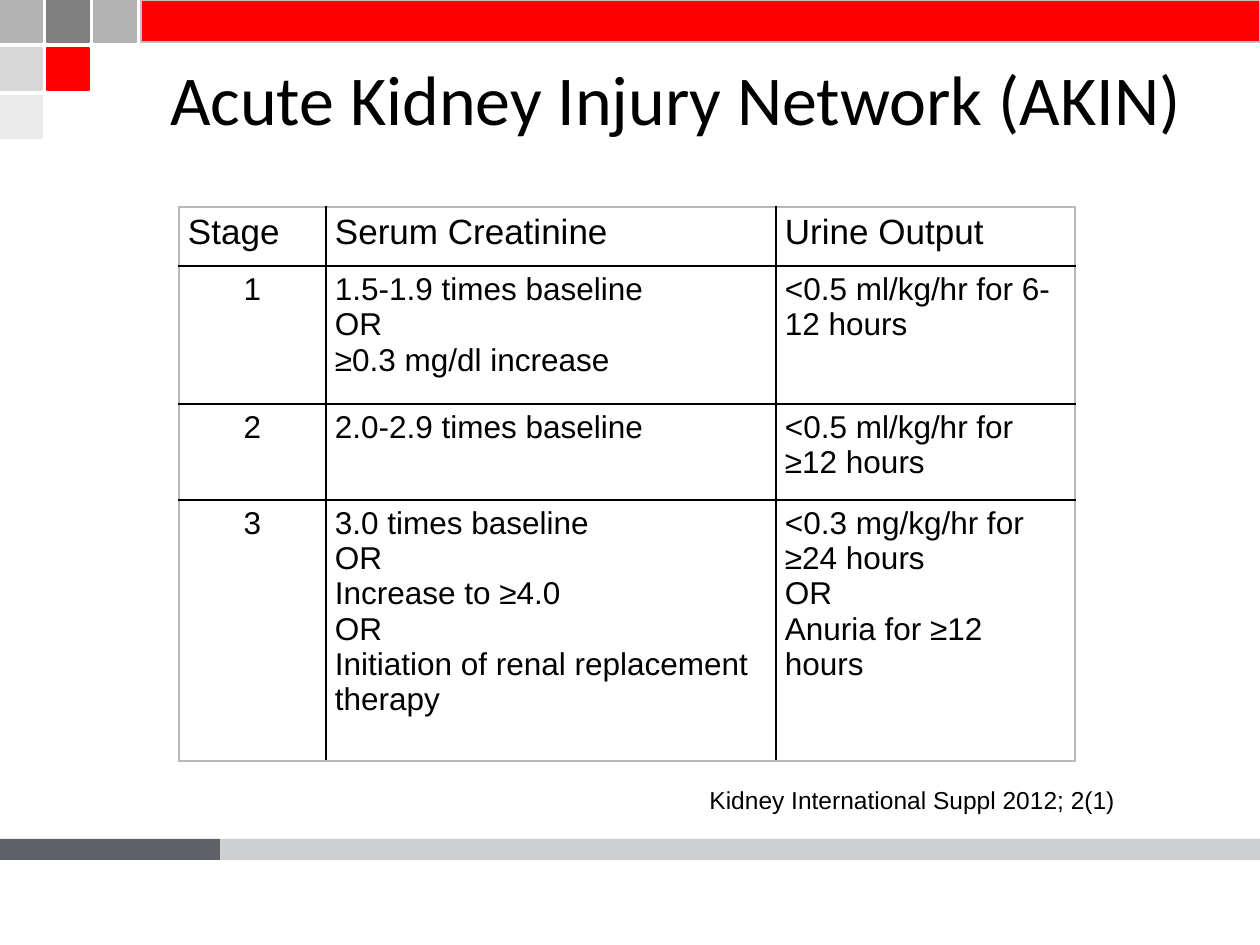
from lxml.etree import SubElement
from pptx import Presentation
from pptx.dml.color import RGBColor
from pptx.enum.shapes import MSO_SHAPE as SHAPE
from pptx.enum.text import MSO_ANCHOR as ANCHOR, PP_ALIGN as ALIGN
from pptx.oxml import parse_xml
from pptx.oxml.ns import nsdecls, qn
from pptx.util import Pt

EMU_PER_PX = 914400 / 126


def px(length):
    return round(length * EMU_PER_PX)


def color(hex_string):
    return RGBColor.from_string(hex_string)


presentation = Presentation()
presentation.slide_width = px(1260)
presentation.slide_height = px(945)
slide = presentation.slides.add_slide(presentation.slide_layouts[5])

# Corner squares, top banner and footer bars: left, top, width, height, fill, line
SQUARE, PITCH = 42, 47
squares = [(0, 0, "B2B2B2"), (1, 0, "808080"), (2, 0, "B2B2B2"),
           (0, 1, "D7D7D7"), (1, 1, "FF0000"), (0, 2, "EAEAEA")]
bars = [(column * PITCH, row * PITCH + row, SQUARE, SQUARE, fill, fill)
        for column, row, fill in squares]
bars += [(141, 0, 1119, 42, "FF0000", "C0C0C0"),
         (0, 839, 220, 21, "5F6168", None),
         (220, 839, 1040, 21, "5F6168", None)]
for left, top, width, height, fill, line in bars:
    shape = slide.shapes.add_shape(SHAPE.RECTANGLE, px(left), px(top), px(width), px(height))
    shape.shadow.inherit = False
    shape.fill.solid()
    shape.fill.fore_color.rgb = color(fill)
    if line:
        shape.line.color.rgb = color(line)
        shape.line.width = Pt(0.75)
    else:
        shape.line.fill.background()

# The last footer bar is see-through
fill_color = shape.fill._xPr.find(qn("a:solidFill"))[0]
SubElement(fill_color, qn("a:alpha"), val="30000")

# Title
title = slide.shapes.title
title.left, title.top, title.width, title.height = px(126), px(48), px(1099), px(98)
title.text_frame.text = "Acute Kidney Injury Network (AKIN)"
title.text_frame.vertical_anchor = ANCHOR.MIDDLE
paragraph = title.text_frame.paragraphs[0]
paragraph.alignment = ALIGN.CENTER
paragraph.font.name = "Calibri"
paragraph.font.size = Pt(40)
paragraph.font.color.rgb = color("000000")

# Staging table
rows = [
    ["Stage", "Serum Creatinine", "Urine Output"],
    ["1", "1.5-1.9 times baseline\nOR\n≥0.3 mg/dl increase", "<0.5 ml/kg/hr for 6-12 hours"],
    ["2", "2.0-2.9 times baseline", "<0.5 ml/kg/hr for ≥12 hours"],
    ["3", "3.0 times baseline\nOR\nIncrease to ≥4.0\nOR\nInitiation of renal replacement therapy",
     "<0.3 mg/kg/hr for ≥24 hours\nOR\nAnuria for ≥12 hours"],
]
column_widths = [147, 450, 299]
row_heights = [59, 138, 96, 261]
table = slide.shapes.add_table(len(rows), len(column_widths), px(179), px(207),
                               px(sum(column_widths)), px(sum(row_heights))).table
table.first_row = table.horz_banding = False
for column, width in zip(table.columns, column_widths):
    column.width = px(width)
for row, height in zip(table.rows, row_heights):
    row.height = px(height)

last_row, last_column = len(rows) - 1, len(column_widths) - 1
for row_index, texts in enumerate(rows):
    for column_index, text in enumerate(texts):
        cell = table.cell(row_index, column_index)
        cell.margin_left = cell.margin_right = px(9)
        cell.margin_top = cell.margin_bottom = px(6)

        # Grey outer frame, black inner rules
        outer_sides = {"lnL": column_index == 0, "lnR": column_index == last_column,
                       "lnT": row_index == 0, "lnB": row_index == last_row}
        for side, is_outer in outer_sides.items():
            rule = "B8B8B8" if is_outer else "000000"
            cell._tc.get_or_add_tcPr().append(parse_xml(
                f'<a:{side} {nsdecls("a")} w="12700"><a:solidFill>'
                f'<a:srgbClr val="{rule}"/></a:solidFill></a:{side}>'))
        cell.fill.background()

        cell.text_frame.text = text
        for paragraph in cell.text_frame.paragraphs:
            if row_index > 0 and column_index == 0:
                paragraph.alignment = ALIGN.CENTER
            for run in paragraph.runs:
                run.font.name = "Arial"
                run.font.size = Pt(18 if row_index else 20)
                run.font.color.rgb = color("000000")

# Citation
citation = slide.shapes.add_textbox(px(697), px(779), px(523), px(43))
citation.text_frame.word_wrap = True
citation.text_frame.text = "Kidney International Suppl 2012; 2(1)"
font = citation.text_frame.paragraphs[0].runs[0].font
font.name = "Arial"
font.size = Pt(14)
font.color.rgb = color("000000")

presentation.save("out.pptx")
